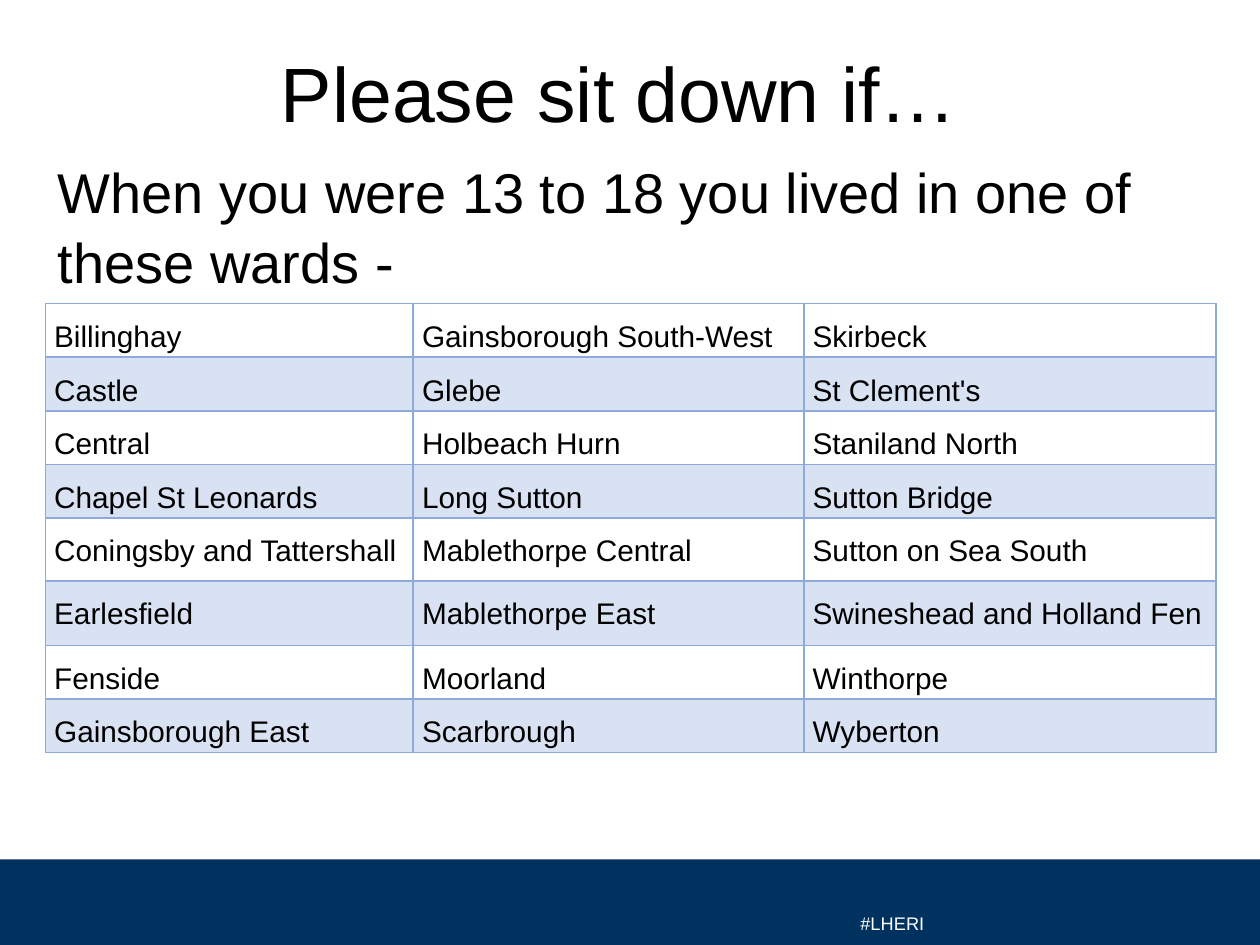
from lxml import etree
from pptx import Presentation
from pptx.dml.color import RGBColor
from pptx.enum.shapes import MSO_SHAPE
from pptx.enum.text import MSO_ANCHOR, PP_ALIGN
from pptx.oxml.ns import qn
from pptx.util import Inches, Pt

RECT = MSO_SHAPE.RECTANGLE
TOP, MIDDLE = MSO_ANCHOR.TOP, MSO_ANCHOR.MIDDLE
LEFT, CENTER = PP_ALIGN.LEFT, PP_ALIGN.CENTER

FONT = "Arial"
COLORS = {"navy": "00325F", "band": "D9E2F3", "rule": "8EAADB",
          "text": "000000", "white": "FFFFFF"}

WARDS = [
    ("Billinghay", "Gainsborough South-West", "Skirbeck"),
    ("Castle", "Glebe", "St Clement's"),
    ("Central", "Holbeach Hurn", "Staniland North"),
    ("Chapel St Leonards", "Long Sutton", "Sutton Bridge"),
    ("Coningsby and Tattershall", "Mablethorpe Central", "Sutton on Sea South"),
    ("Earlesfield", "Mablethorpe East", "Swineshead and Holland Fen"),
    ("Fenside", "Moorland", "Winthorpe"),
    ("Gainsborough East", "Scarbrough", "Wyberton"),
]
WIDTHS = [2.92, 3.1, 3.27]
HEIGHTS = [0.41] * 4 + [0.5, 0.51] + [0.41] * 2


def rgb(name):
    return RGBColor.from_string(COLORS[name])


def style(para, size, color="text"):
    font = para.font
    font.name, font.size = FONT, Pt(size)
    font.color.rgb = rgb(color)


def add_text(slide, box, text, size, color="text", align=LEFT, anchor=TOP):
    frame = slide.shapes.add_textbox(*map(Inches, box)).text_frame
    frame.word_wrap = True
    frame.vertical_anchor = anchor
    para = frame.paragraphs[0]
    para.text, para.alignment = text, align
    style(para, size, color)
    return frame


def add_footer(slide):
    bar = slide.shapes.add_shape(
        RECT, Inches(0), Inches(6.82), Inches(10), Inches(0.68))
    bar.shadow.inherit = False
    bar.fill.solid()
    bar.fill.fore_color.rgb = rgb("navy")
    bar.line.fill.background()
    tag = add_text(slide, (6.73, 7.02, 0.79, 0.3), "#LHERI", 18, "white")
    tag.word_wrap = False
    # Lowered text has no public setting
    run = tag.paragraphs[0].runs[0]
    run._r.get_or_add_rPr().set("baseline", "-25000")


def add_border(cell, side, width):
    line = etree.SubElement(cell._tc.get_or_add_tcPr(), qn(f"a:ln{side}"),
                            w=str(Pt(width)))
    fill = etree.SubElement(line, qn("a:solidFill"))
    etree.SubElement(fill, qn("a:srgbClr"), val=COLORS["rule"])


def fill_cell(cell, text, row):
    cell.margin_left = cell.margin_right = Inches(0.07)
    cell.margin_top = cell.margin_bottom = 0
    para = cell.text_frame.paragraphs[0]
    para.text, para.line_spacing = text, 1.5
    style(para, 17)
    # The rule below the first row is heavier
    heavy = {0: "B", 1: "T"}.get(row)
    for side in "LRTB":
        add_border(cell, side, 1.5 if side == heavy else 1)
    if row % 2:
        cell.fill.solid()
        cell.fill.fore_color.rgb = rgb("band")
    else:
        cell.fill.background()


def add_wards(slide):
    frame = slide.shapes.add_table(
        len(WARDS), len(WIDTHS), Inches(0.36), Inches(2.41),
        Inches(sum(WIDTHS)), Inches(sum(HEIGHTS)))
    table = frame.table
    table.first_row = table.horz_banding = False
    for col, width in zip(table.columns, WIDTHS):
        col.width = Inches(width)
    for row, height in zip(table.rows, HEIGHTS):
        row.height = Inches(height)
    for r, names in enumerate(WARDS):
        for c, name in enumerate(names):
            fill_cell(table.cell(r, c), name, r)


def main():
    deck = Presentation()
    deck.slide_width, deck.slide_height = Inches(10), Inches(7.5)
    slide = deck.slides.add_slide(deck.slide_layouts[6])
    add_footer(slide)
    add_text(slide, (0.5, 0.3, 9, 0.85), "Please sit down if… ", 44,
             align=CENTER, anchor=MIDDLE)
    body = add_text(slide, (0.36, 1.15, 9.28, 5.55),
                    "When you were 13 to 18 you lived in one of these wards -", 32)
    body.margin_top = Inches(0.08)
    body.paragraphs[0].line_spacing = 1.04
    add_wards(slide)
    deck.save("out.pptx")


if __name__ == "__main__":
    main()
